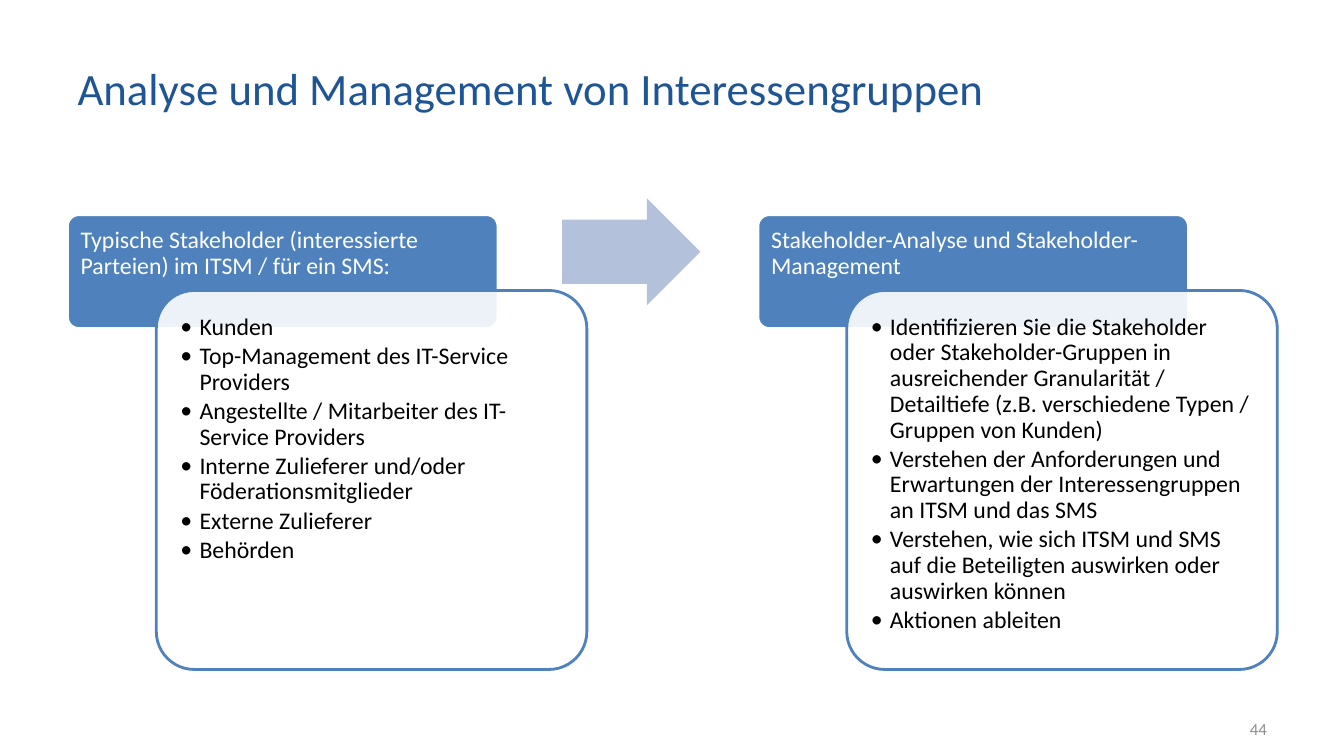
from lxml import etree
from pptx import Presentation
from pptx.dml.color import RGBColor
from pptx.enum import shapes, text
from pptx.oxml import ns
from pptx.util import Cm, Pt

TITLE_BLUE = RGBColor(0x20, 0x55, 0x95)
BLUE = RGBColor(0x4F, 0x81, 0xBD)
PALE_BLUE = RGBColor(0xB3, 0xC1, 0xDB)
GREY = RGBColor(0x8C, 0x8C, 0x8C)
WHITE = RGBColor(0xFF, 0xFF, 0xFF)
BLACK = RGBColor(0, 0, 0)

COLUMNS = [
    ("Typische Stakeholder (interessierte Parteien) im ITSM / für ein SMS:", [
        "Kunden",
        "Top-Management des IT-Service Providers",
        "Angestellte / Mitarbeiter des IT-Service Providers",
        "Interne Zulieferer und/oder Föderationsmitglieder",
        "Externe Zulieferer",
        "Behörden",
    ]),
    ("Stakeholder-Analyse und Stakeholder-Management", [
        "Identifizieren Sie die Stakeholder oder Stakeholder-Gruppen in "
        "ausreichender Granularität / Detailtiefe (z.B. verschiedene Typen / "
        "Gruppen von Kunden)",
        "Verstehen der Anforderungen und Erwartungen der Interessengruppen "
        "an ITSM und das SMS",
        "Verstehen, wie sich ITSM und SMS auf die Beteiligten auswirken oder "
        "auswirken können",
        "Aktionen ableiten",
    ]),
]


def style(paragraph, size, color, align=text.PP_ALIGN.LEFT):
    paragraph.alignment = align
    paragraph.font.name = "Calibri"
    paragraph.font.size = Pt(size)
    paragraph.font.color.rgb = color


def add_card(left, top, height, fill, line, inset):
    card = slide.shapes.add_shape(
        shapes.MSO_SHAPE.ROUNDED_RECTANGLE, Cm(left), Cm(top), Cm(10.85), Cm(height))
    card.adjustments[0] = 0.1
    card.shadow.inherit = False
    card.fill.solid()
    card.fill.fore_color.rgb = fill
    card.line.color.rgb = line
    card.line.width = Pt(2)
    frame = card.text_frame
    frame.word_wrap = True
    frame.vertical_anchor = text.MSO_ANCHOR.TOP
    frame.margin_left = frame.margin_right = frame.margin_top = Cm(inset)
    return card


prs = Presentation()
prs.slide_width, prs.slide_height = Cm(33.87), Cm(19.05)
slide = prs.slides.add_slide(prs.slide_layouts[5])

title = slide.shapes.title
title.left, title.top, title.width, title.height = Cm(1.7), Cm(0.76), Cm(25.17), Cm(2.92)
title.text_frame.text = "Analyse und Management von Interessengruppen"
title.text_frame.vertical_anchor = text.MSO_ANCHOR.MIDDLE
style(title.text_frame.paragraphs[0], 32, TITLE_BLUE)

for column, (heading, points) in enumerate(COLUMNS):
    left = 1.7 + column * 17.4
    header = add_card(left, 5.41, 2.87, BLUE, WHITE, 0.25)
    header.text_frame.text = heading
    heading_line = header.text_frame.paragraphs[0]
    heading_line.line_spacing = 0.9
    style(heading_line, 17, WHITE)

    body = add_card(left + 2.24, 7.32, 9.55, WHITE, BLUE, 0.33)
    fill_color = body.fill._xPr.find(".//" + ns.qn("a:srgbClr"))
    etree.SubElement(fill_color, ns.qn("a:alpha"), val="90000")
    body.text_frame.text = "\n".join(points)
    for point in body.text_frame.paragraphs:
        properties = point._p.get_or_add_pPr()
        properties.set("marL", str(Cm(0.48)))
        properties.set("indent", str(-Cm(0.48)))
        etree.SubElement(properties, ns.qn("a:buFont"), typeface="Calibri")
        etree.SubElement(properties, ns.qn("a:buChar"), char="•")
        point.line_spacing = 0.9
        point.space_after = Pt(2.5)
        style(point, 17, BLACK)

arrow = slide.shapes.add_shape(
    shapes.MSO_SHAPE.RIGHT_ARROW, Cm(14.17), Cm(5), Cm(3.48), Cm(2.69))
arrow.adjustments[0] = 0.6
arrow.adjustments[1] = 0.5
arrow.shadow.inherit = False
arrow.fill.solid()
arrow.fill.fore_color.rgb = PALE_BLUE
arrow.line.fill.background()

page_number = slide.shapes.add_textbox(Cm(24.28), Cm(17.86), Cm(7.9), Cm(1.02))
page_number.text_frame.word_wrap = True
page_number.text_frame.vertical_anchor = text.MSO_ANCHOR.MIDDLE
page_number.text_frame.text = "44"
style(page_number.text_frame.paragraphs[0], 12, GREY, text.PP_ALIGN.RIGHT)

prs.save("out.pptx")
